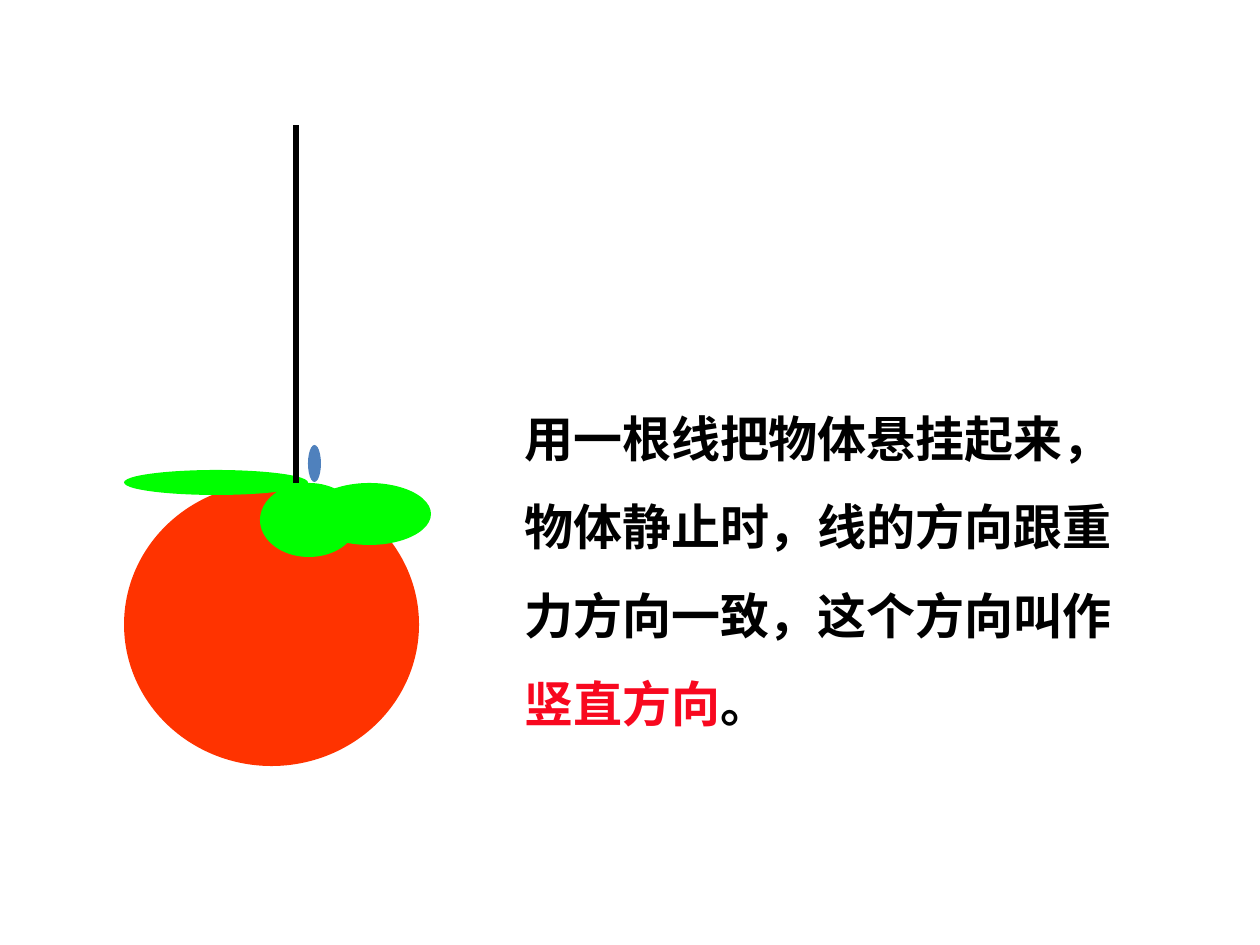
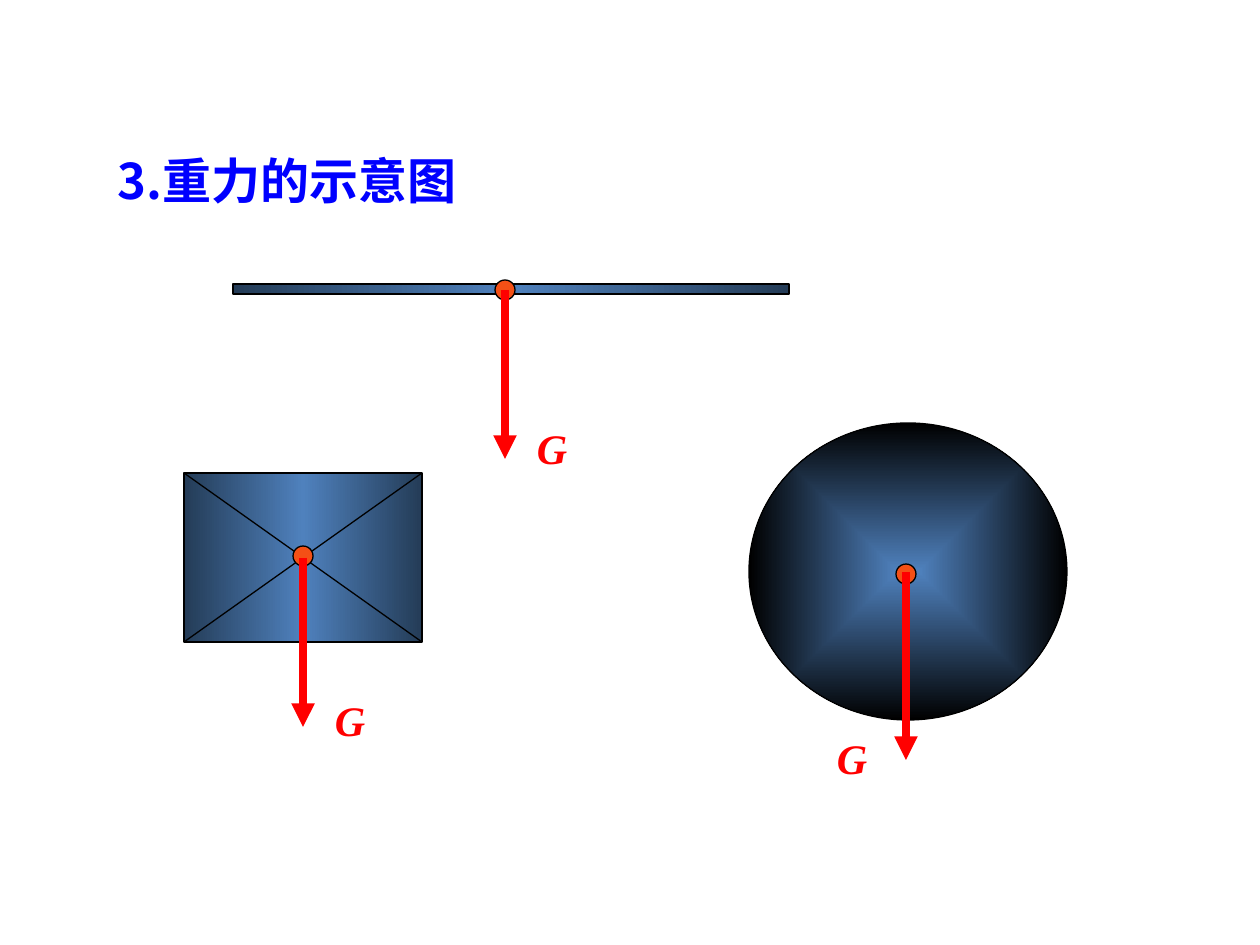
from lxml.etree import SubElement
from pptx import Presentation
from pptx.dml.color import RGBColor
from pptx.enum.shapes import MSO_CONNECTOR, MSO_SHAPE
from pptx.enum.text import MSO_ANCHOR, MSO_AUTO_SIZE as FIT, PP_ALIGN
from pptx.oxml.ns import qn
from pptx.util import Emu, Inches, Pt

BLACK = RGBColor(0x00, 0x00, 0x00)
RED = RGBColor(0xFF, 0x00, 0x00)
KEYWORD = RGBColor(0xF8, 0x08, 0x1F)
TITLE_BLUE = RGBColor(0x00, 0x00, 0xFF)
FRUIT = RGBColor(0xFF, 0x33, 0x00)
LEAF = RGBColor(0x00, 0xFF, 0x00)
STEEL = RGBColor(0x4F, 0x81, 0xBD)
DARK_STEEL = RGBColor(0x24, 0x3C, 0x57)
DOT = RGBColor(0xF4, 0x50, 0x16)

SERIF = "Times New Roman"
SANS = "Noto Sans CJK SC"
TITLE_ONLY, BLANK = 5, 6
METAL = [(0, DARK_STEEL), (50, STEEL), (100, DARK_STEEL)]
GLOW = [(0, STEEL), (100, BLACK)]
DOT_SIZE = 20


def px(n):
    return Emu(round(n * 914400 / 126))


def write(tf, runs, font=SERIF, size=28, italic=False, align=PP_ALIGN.LEFT,
          spacing=None, wrap=True, fit=FIT.SHAPE_TO_FIT_TEXT):
    tf.word_wrap = wrap
    tf.auto_size = fit
    tf.vertical_anchor = MSO_ANCHOR.TOP
    p = tf.paragraphs[0]
    p.alignment = align
    p.line_spacing = spacing
    for text, color in runs:
        r = p.add_run()
        r.text = text
        r.font.name = font
        r.font.size = Pt(size)
        r.font.bold = True
        r.font.italic = italic
        r.font.color.rgb = color
        SubElement(r.font._element, qn("a:ea"), typeface=SANS)


def add_text(slide, x, y, w, h, runs, **fmt):
    box = slide.shapes.add_textbox(px(x), px(y), px(w), px(h))
    write(box.text_frame, runs, **fmt)


def add_shape(slide, kind, x, y, w, h, fill=None, outlined=True):
    sp = slide.shapes.add_shape(kind, px(x), px(y), px(w), px(h))
    sp.shadow.inherit = False
    if fill is None:
        sp.fill.background()
    else:
        sp.fill.solid()
        sp.fill.fore_color.rgb = fill
    if outlined:
        sp.line.color.rgb = BLACK
        sp.line.width = Pt(0.75)
    else:
        sp.line.fill.background()
    return sp


def add_gradient(sp, stops, radial=False):
    spPr = sp._element.spPr
    grad = spPr.makeelement(qn("a:gradFill"), rotWithShape="1")
    spPr.replace(spPr.find(qn("a:noFill")), grad)
    gs_list = SubElement(grad, qn("a:gsLst"))
    for pos, color in stops:
        gs = SubElement(gs_list, qn("a:gs"), pos=str(pos * 1000))
        SubElement(gs, qn("a:srgbClr"), val=str(color))
    if radial:
        way = SubElement(grad, qn("a:path"))
        way.set("path", "shape")
        SubElement(way, qn("a:fillToRect"), l="50000", t="50000", r="50000", b="50000")
    else:
        SubElement(grad, qn("a:lin"), ang="0", scaled="1")


def add_line(slide, x1, y1, x2, y2, color=BLACK, width=0.75, arrow=False):
    line = slide.shapes.add_connector(MSO_CONNECTOR.STRAIGHT, px(x1), px(y1), px(x2), px(y2))
    line.line.color.rgb = color
    line.line.width = Pt(width)
    spPr = line._element.spPr
    if arrow:
        SubElement(spPr.find(qn("a:ln")), qn("a:tailEnd"), type="triangle")
    SubElement(spPr, qn("a:effectLst"))


def hanging_fruit(slide, x, y):
    parts = [
        (0, 358, 295, 283, FRUIT),
        (0, 345, 184, 25, LEAF),
        (184, 358, 123, 62, LEAF),
        (136, 358, 98, 74, LEAF),
        (184, 320, 13, 37, STEEL),
    ]
    for dx, dy, w, h, color in parts:
        add_shape(slide, MSO_SHAPE.OVAL, x + dx, y + dy, w, h, color, outlined=False)
    add_line(slide, x + 172, y + 358, x + 172, y, width=3)


def gravity(slide, x, y, length, label_dx, label_dy, start=0):
    add_shape(slide, MSO_SHAPE.OVAL, x - DOT_SIZE / 2, y - DOT_SIZE / 2,
              DOT_SIZE, DOT_SIZE, DOT)
    add_line(slide, x, y + start, x, y + start + length, RED, 4.5, arrow=True)
    add_text(slide, x + label_dx, y + label_dy, 58, 63, [("G", RED)],
             size=24, italic=True, align=PP_ALIGN.CENTER, wrap=False)


def rod(slide, x, y, w, h):
    add_gradient(add_shape(slide, MSO_SHAPE.RECTANGLE, x, y, w, h), METAL)
    gravity(slide, x + 272, y + 6, 169, 18, 126)


def block(slide, x, y, w, h):
    add_gradient(add_shape(slide, MSO_SHAPE.RECTANGLE, x, y, w, h), METAL)
    add_line(slide, x, y, x + w, y + h)
    add_line(slide, x, y + h, x + w, y)
    gravity(slide, x + w / 2, y + 83, 169, 18, 132, start=2)


def ball(slide, x, y, w, h):
    add_gradient(add_shape(slide, MSO_SHAPE.OVAL, x, y, w, h), GLOW, radial=True)
    gravity(slide, x + 157, y + 151, 188, -83, 152, start=-2)


def vertical_direction_slide(prs):
    slide = prs.slides.add_slide(prs.slide_layouts[BLANK])
    hanging_fruit(slide, 124, 125)
    add_text(slide, 512, 373, 655, 367, [
        ("用一根线把物体悬挂起来，物体静止时，线的方向跟重力方向一致，这个方向叫作", BLACK),
        ("竖直方向", KEYWORD),
        ("。", BLACK),
    ], spacing=1.5)


def gravity_diagram_slide(prs):
    slide = prs.slides.add_slide(prs.slide_layouts[TITLE_ONLY])
    title = slide.shapes.title
    title.left, title.top, title.width, title.height = map(px, (105, 115, 1022, 101))
    write(title.text_frame, [("3.重力的示意图", TITLE_BLUE)], font=SANS, spacing=1.5, fit=FIT.NONE)
    rod(slide, 233, 284, 556, 10)
    block(slide, 184, 473, 238, 169)
    ball(slide, 749, 423, 318, 297)


def main():
    prs = Presentation()
    prs.slide_width, prs.slide_height = Inches(10), Inches(7.5)
    vertical_direction_slide(prs)
    gravity_diagram_slide(prs)
    prs.save("out.pptx")


if __name__ == "__main__":
    main()
